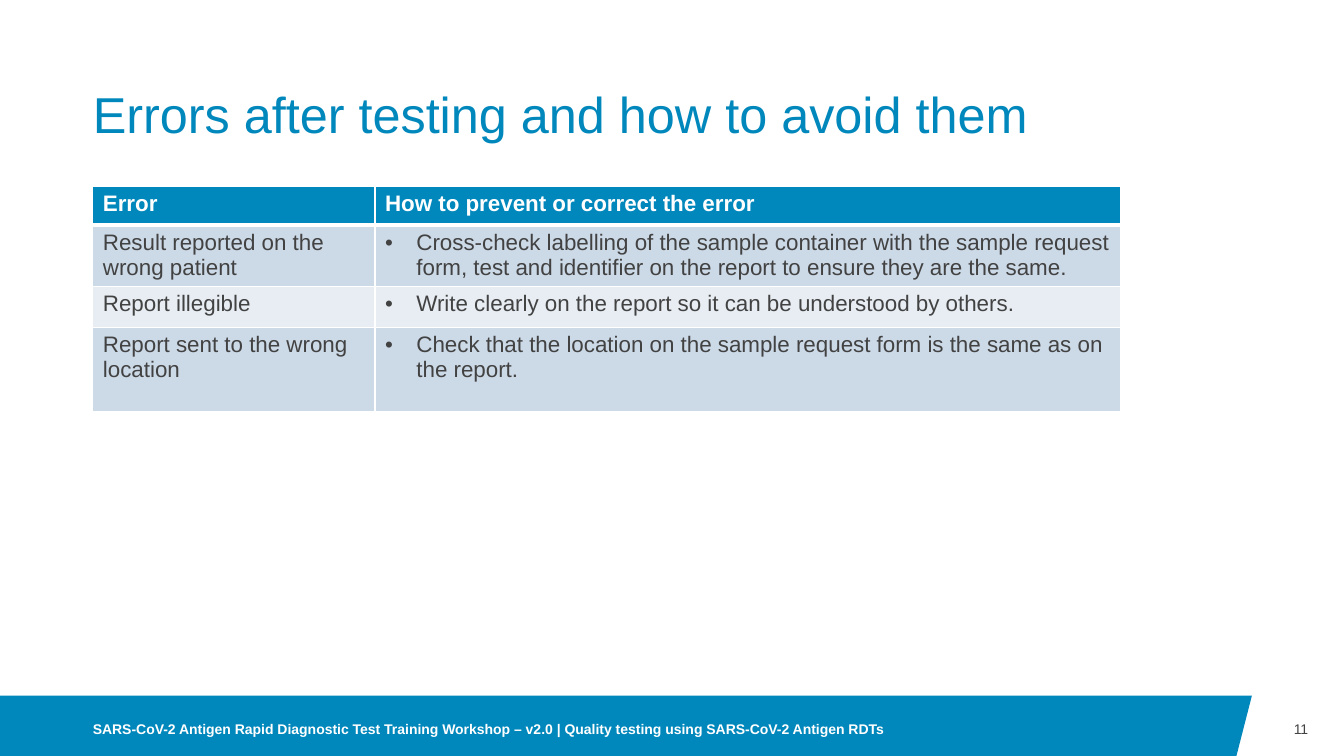
from dataclasses import dataclass

from lxml.etree import SubElement
from pptx import Presentation
from pptx.dml.color import RGBColor
from pptx.enum.text import MSO_ANCHOR, MSO_AUTO_SIZE, PP_ALIGN
from pptx.oxml.ns import qn
from pptx.util import Cm, Pt


@dataclass(frozen=True)
class Theme:
    font: str = "Arial"
    blue: str = "0087BC"
    white: str = "FFFFFF"
    text: str = "424242"
    bands: tuple = ("CCD9E7", "E7EDF3")
    title_size: int = 36
    table_size: int = 16
    footer_size: int = 10


THEME = Theme()

LEFT = Cm(2.34)
FOOTER_TOP = Cm(17.53)
COLUMN_WIDTHS = (Cm(7.11), Cm(18.8))
ROW_HEIGHTS = (Cm(0.97), Cm(1.55), Cm(1.03), Cm(2.13))
HEADINGS = ("Error", "How to prevent or correct the error")
ERRORS = (
    ("Result reported on the wrong patient",
     "Cross-check labelling of the sample container with the sample request "
     "form, test and identifier on the report to ensure they are the same."),
    ("Report illegible",
     "Write clearly on the report so it can be understood by others."),
    ("Report sent to the wrong location",
     "Check that the location on the sample request form is the same as on "
     "the report."),
)


def add_span(para, text, size, color, bold=False):
    span = para.add_run()
    span.text = text
    span.font.name = THEME.font
    span.font.size = Pt(size)
    span.font.bold = bold
    span.font.color.rgb = RGBColor.from_string(color)


def prepare_frame(frame, anchor):
    """Turn on wrapping, drop the insets and return the first paragraph."""
    frame.word_wrap = True
    frame.auto_size = MSO_AUTO_SIZE.NONE
    frame.vertical_anchor = anchor
    frame.margin_left = frame.margin_right = 0
    frame.margin_top = frame.margin_bottom = 0
    return frame.paragraphs[0]


def set_title(page, text):
    title = page.shapes.title
    title.left, title.top = LEFT, Cm(1.02)
    title.width, title.height = Cm(29.21), Cm(2.62)
    para = prepare_frame(title.text_frame, MSO_ANCHOR.BOTTOM)
    para.alignment = PP_ALIGN.LEFT
    para.line_spacing = 0.9
    add_span(para, text, THEME.title_size, THEME.blue)


def add_footer_band(page, deck):
    bottom = deck.slide_height
    builder = page.shapes.build_freeform(0, FOOTER_TOP)
    builder.add_line_segments(
        [(Cm(31.55), FOOTER_TOP), (Cm(31.16), bottom), (0, bottom)])
    band = builder.convert_to_shape()
    band.shadow.inherit = False
    band.fill.solid()
    band.fill.fore_color.rgb = RGBColor.from_string(THEME.blue)
    band.line.fill.background()


def add_footer_text(page, text, left, width, color, align, bold=False):
    box = page.shapes.add_textbox(left, Cm(17.7), width, Cm(1.35))
    para = prepare_frame(box.text_frame, MSO_ANCHOR.MIDDLE)
    para.alignment = align
    add_span(para, text, THEME.footer_size, color, bold)


def add_borders(cell, top, bottom):
    """Draw white cell edges; top and bottom are widths in points."""
    properties = cell._tc.get_or_add_tcPr()
    for side, width in (("L", 1), ("R", 1), ("T", top), ("B", bottom)):
        line = SubElement(properties, qn(f"a:ln{side}"), w=str(Pt(width)))
        fill = SubElement(line, qn("a:solidFill"))
        SubElement(fill, qn("a:srgbClr"), val=THEME.white)


def add_bullet(para):
    properties = para._p.get_or_add_pPr()
    indent = Cm(0.79)
    properties.set("marL", str(indent))
    properties.set("indent", str(-indent))
    SubElement(properties, qn("a:buFont"), typeface=THEME.font)
    SubElement(properties, qn("a:buChar"), char="•")


def fill_cell(cell, text, row, bulleted):
    header = row == 0
    add_borders(cell, top=3 if row == 1 else 1, bottom=3 if header else 1)
    background = THEME.blue if header else THEME.bands[(row - 1) % 2]
    cell.fill.solid()
    cell.fill.fore_color.rgb = RGBColor.from_string(background)
    para = cell.text_frame.paragraphs[0]
    if bulleted:
        add_bullet(para)
    color = THEME.white if header else THEME.text
    add_span(para, text, THEME.table_size, color, bold=header)


def add_error_table(page):
    rows = (HEADINGS, *ERRORS)
    table = page.shapes.add_table(
        len(rows), len(HEADINGS), LEFT, Cm(4.7),
        sum(COLUMN_WIDTHS), sum(ROW_HEIGHTS)).table
    for column, width in zip(table.columns, COLUMN_WIDTHS):
        column.width = width
    for row, (texts, height) in enumerate(zip(rows, ROW_HEIGHTS)):
        table.rows[row].height = height
        for column, text in enumerate(texts):
            fill_cell(table.cell(row, column), text, row,
                      bulleted=row > 0 and column == 1)


def main():
    deck = Presentation()
    deck.slide_width, deck.slide_height = Cm(33.87), Cm(19.05)
    page = deck.slides.add_slide(deck.slide_layouts[5])
    add_footer_band(page, deck)
    set_title(page, "Errors after testing and how to avoid them")
    add_error_table(page)
    add_footer_text(
        page,
        "SARS-CoV-2 Antigen Rapid Diagnostic Test Training Workshop – v2.0 | "
        "Quality testing using SARS-CoV-2 Antigen RDTs",
        LEFT, Cm(20.8), THEME.white, PP_ALIGN.LEFT, bold=True)
    add_footer_text(page, "11", Cm(31.55), Cm(1.42), THEME.text,
                    PP_ALIGN.RIGHT)
    deck.save("out.pptx")


if __name__ == "__main__":
    main()
